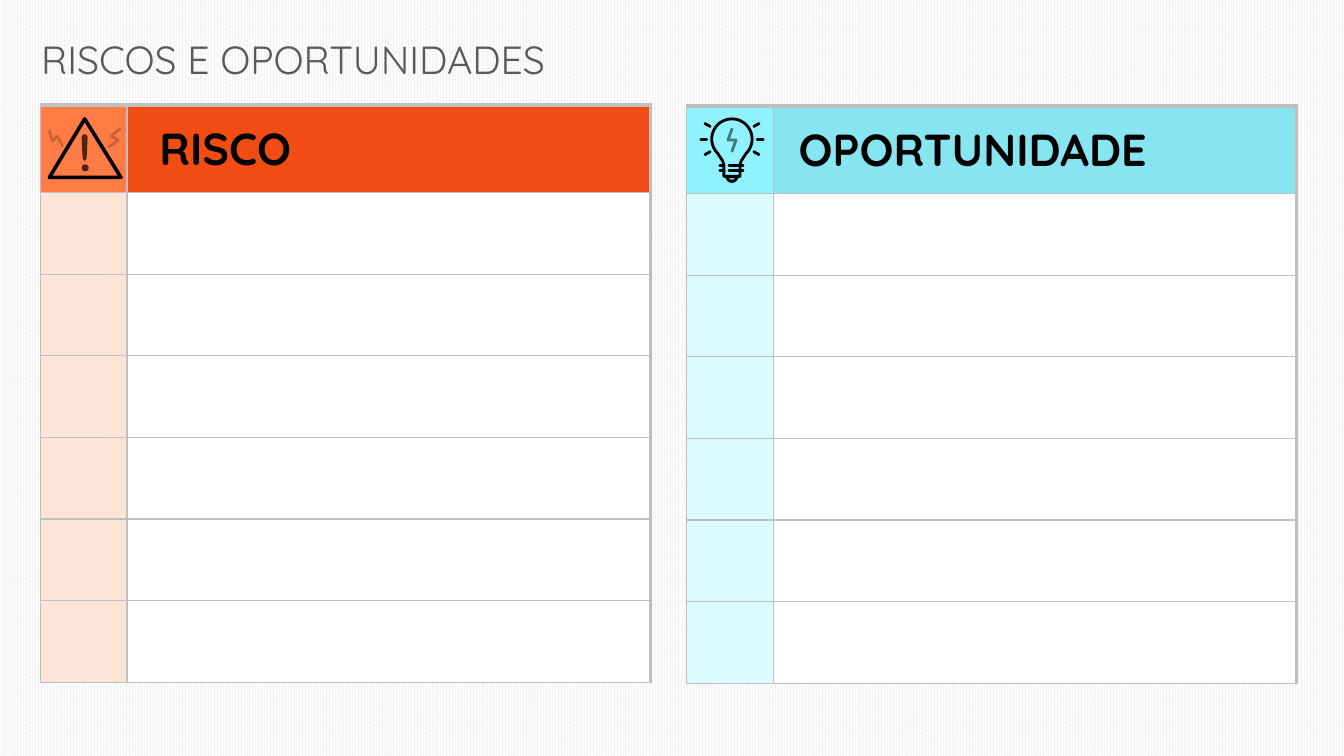
"""Build the slide of risks and opportunities with its two tables."""
from math import cos, radians, sin

from lxml import etree
from pptx import Presentation
from pptx.dml.color import RGBColor
from pptx.enum.dml import MSO_PATTERN
from pptx.enum.shapes import MSO_CONNECTOR, MSO_SHAPE
from pptx.enum.text import MSO_ANCHOR
from pptx.oxml.ns import qn
from pptx.util import Inches, Pt

STRAIGHT = MSO_CONNECTOR.STRAIGHT
OVAL = MSO_SHAPE.OVAL
MIDDLE = MSO_ANCHOR.MIDDLE
DOTS = MSO_PATTERN.PERCENT_80

BLACK = RGBColor(0, 0, 0)
WHITE = RGBColor(255, 255, 255)
PALE_GRAY = RGBColor(0xF2, 0xF2, 0xF2)
BORDER_GRAY = RGBColor(0xBF, 0xBF, 0xBF)
TITLE_GRAY = RGBColor(0x59, 0x59, 0x59)
ORANGE = RGBColor(0xF0, 0x4C, 0x13)
ORANGE_ICON = RGBColor(0xFF, 0x7C, 0x46)
ORANGE_PALE = RGBColor(0xFC, 0xE4, 0xD6)
CYAN = RGBColor(0x86, 0xE5, 0xF1)
CYAN_ICON = RGBColor(0x8E, 0xF3, 0xFF)
CYAN_PALE = RGBColor(0xDC, 0xFB, 0xFF)

FONT = "Quicksand"
COLUMN_WIDTHS = (0.86, 5.19)
ROW_HEIGHTS = (0.87,) + (0.81,) * 6


def write(frame, text, size, color, bold=False, indent=0):
    """Put formatted text into the first paragraph of a frame."""
    paragraph = frame.paragraphs[0]
    paragraph.text = text
    font = paragraph.runs[0].font
    font.name, font.size, font.bold = FONT, Pt(size), bold
    font.color.rgb = color
    if indent:
        properties = paragraph._p.get_or_add_pPr()
        properties.set("marL", str(Inches(indent)))
        properties.set("indent", "0")


def set_opacity(properties, percent):
    """Set the opacity of every plain colour inside an element."""
    for color in properties.iter(qn("a:srgbClr")):
        etree.SubElement(color, qn("a:alpha"), val=str(percent * 1000))


def arc(center_x, center_y, radius, start, end, step=5):
    """Return points along an arc, with angles in degrees."""
    return [(center_x + radius * cos(radians(angle)), center_y + radius * sin(radians(angle)))
            for angle in range(start, end + 1, step)]


class SlideMaker:
    """Hold the current slide and draw its elements."""

    def __init__(self, slide):
        """Keep the slide and give it the dotted background."""
        self.slide = slide
        self.shapes = slide.shapes
        fill = slide.background.fill
        fill.patterned()
        fill.pattern = DOTS
        fill.fore_color.rgb = PALE_GRAY
        fill.back_color.rgb = WHITE

    def title(self, text):
        """Add the slide title."""
        box = self.shapes.add_textbox(Inches(0.31), Inches(0.3), Inches(8.66), Inches(0.57))
        box.text_frame.word_wrap = True
        write(box.text_frame, text, 28, TITLE_GRAY)

    def cell(self, cell, color, top, right):
        """Give a table cell its borders and fill."""
        properties = cell._tc.get_or_add_tcPr()
        for side, width in (("L", 1), ("R", right), ("T", top), ("B", 1)):
            line = etree.SubElement(properties, qn(f"a:ln{side}"), w=str(Pt(width)))
            fill = etree.SubElement(line, qn("a:solidFill"))
            etree.SubElement(fill, qn("a:srgbClr"), val=str(BORDER_GRAY))
        cell.fill.solid()
        cell.fill.fore_color.rgb = color

    def table(self, left, top, heading, indent, icon_color, heading_color, side_color):
        """Add a table with a coloured heading and empty rows."""
        table = self.shapes.add_table(
            len(ROW_HEIGHTS), len(COLUMN_WIDTHS), Inches(left), Inches(top),
            Inches(sum(COLUMN_WIDTHS)), Inches(sum(ROW_HEIGHTS))).table
        table.first_row = table.horz_banding = False
        for column, width in zip(table.columns, COLUMN_WIDTHS):
            column.width = Inches(width)
        for index, height in enumerate(ROW_HEIGHTS):
            table.rows[index].height = Inches(height)
            colors = (side_color, WHITE) if index else (icon_color, heading_color)
            for column, color in enumerate(colors):
                self.cell(table.cell(index, column), color,
                          top=1 if index else 3, right=2.25 if column else 1)
        header = table.cell(0, 1)
        header.vertical_anchor = MIDDLE
        header.margin_left = header.margin_top = header.margin_right = Inches(0.01)
        header.margin_bottom = 0
        write(header.text_frame, heading, 32, BLACK, bold=True, indent=indent)

    def stroke(self, shape, width, opacity):
        """Give a shape a black line with round ends and joins."""
        shape.line.color.rgb = BLACK
        shape.line.width = Pt(width)
        line = shape.line._get_or_add_ln()
        line.set("cap", "rnd")
        etree.SubElement(line, qn("a:round"))
        set_opacity(line, opacity)

    def line(self, start, end, width=2):
        """Add a straight black line."""
        connector = self.shapes.add_connector(
            STRAIGHT, *(Inches(value) for value in (*start, *end)))
        self.stroke(connector, width, 100)
        etree.SubElement(connector._element.spPr, qn("a:effectLst"))

    def fill(self, shape, opacity):
        """Fill a shape with black and hide its line."""
        shape.shadow.inherit = False
        shape.fill.solid()
        shape.fill.fore_color.rgb = BLACK
        shape.line.fill.background()
        set_opacity(shape._element.spPr, opacity)

    def outline(self, points, closed=False, width=2, opacity=100, filled=False):
        """Add a freeform that is either stroked or filled."""
        start, *others = [(Inches(x), Inches(y)) for x, y in points]
        builder = self.shapes.build_freeform(*start)
        builder.add_line_segments(others, close=closed)
        shape = builder.convert_to_shape()
        if filled:
            self.fill(shape, opacity)
        else:
            shape.shadow.inherit = False
            shape.fill.background()
            self.stroke(shape, width, opacity)

    def warning_icon(self):
        """Draw the warning triangle between two bolts."""
        self.outline([(0.49, 1.3), (0.52, 1.4), (0.57, 1.35), (0.62, 1.45)], opacity=20)
        self.outline([(1.19, 1.28), (1.1, 1.35), (1.17, 1.39), (1.08, 1.46)], opacity=20)
        self.outline([(0.49, 1.76), (0.84, 1.18), (1.2, 1.76)], closed=True, width=2.6)
        self.outline([(0.81, 1.36), (0.82, 1.34), (0.84, 1.33), (0.86, 1.34), (0.87, 1.36),
                      (0.86, 1.57), (0.84, 1.6), (0.82, 1.57)],
                     closed=True, opacity=70, filled=True)
        dot = self.shapes.add_shape(
            OVAL, Inches(0.81), Inches(1.63), Inches(0.07), Inches(0.07))
        self.fill(dot, 70)

    def bulb_icon(self):
        """Draw the light bulb with its rays and bolt."""
        x, y = 7.26, 1.38
        cap = arc(x, 1.75, 0.05, 0, 180, 15)
        self.outline(cap, closed=True, opacity=24, filled=True)
        self.outline(cap)
        base = [(x + 0.09, 1.6), (x + 0.08, 1.64), (x + 0.08, 1.75),
                (x - 0.08, 1.75), (x - 0.08, 1.64), (x - 0.09, 1.6)]
        self.outline(arc(x, y, 0.2, 135, 405) + base, closed=True)
        for height in (1.64, 1.69):
            self.line((7.14, height), (7.18, height))
            self.line((7.23, height), (7.37, height))
        for angle in (-30, 0, 30, 150, 180, 210):
            inner, outer = (arc(x, y, radius, angle, angle)[0] for radius in (0.25, 0.31))
            self.line(inner, outer)
        self.outline([(7.26, 1.28), (7.22, 1.39), (7.3, 1.39), (7.26, 1.5)], opacity=50)


def main():
    """Create and save the presentation."""
    presentation = Presentation()
    presentation.slide_width, presentation.slide_height = Inches(13.33), Inches(7.5)
    maker = SlideMaker(presentation.slides.add_slide(presentation.slide_layouts[6]))
    maker.title("RISCOS E OPORTUNIDADES")
    maker.table(0.4, 1.04, "RISCO", 0.31, ORANGE_ICON, ORANGE, ORANGE_PALE)
    maker.table(6.81, 1.05, "OPORTUNIDADE", 0.24, CYAN_ICON, CYAN, CYAN_PALE)
    maker.warning_icon()
    maker.bulb_icon()
    presentation.save("out.pptx")


if __name__ == "__main__":
    main()
